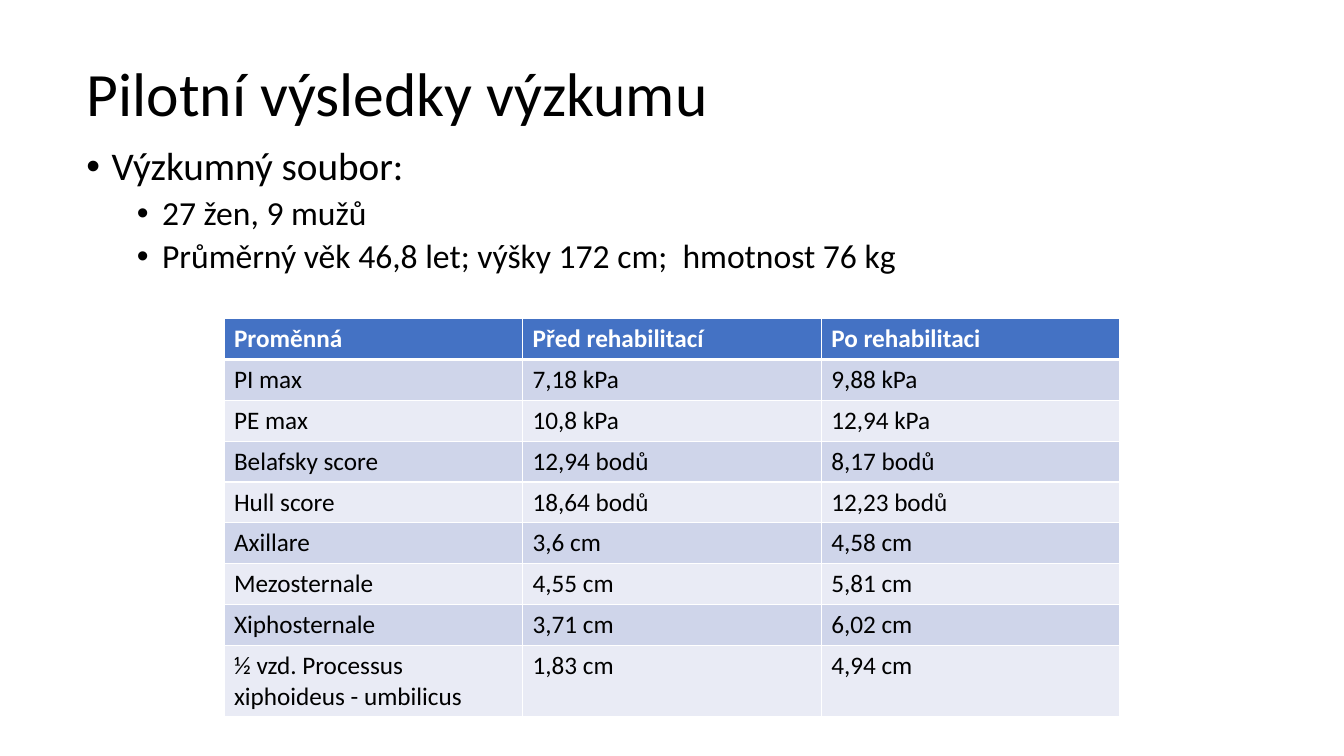
import dataclasses
import typing

import pptx
import pptx.dml.color
import pptx.enum.text
import pptx.oxml
import pptx.oxml.ns
import pptx.presentation
import pptx.slide
import pptx.table
import pptx.text.text
import pptx.util

Pt = pptx.util.Pt
FONT = "Calibri"
BLACK, WHITE, BLUE = "000000", "FFFFFF", "4472C4"
BANDS = ("CFD5EA", "E9EBF5")
ROWS = (
    ("Proměnná", "Před rehabilitací", "Po rehabilitaci"),
    ("PI max", "7,18 kPa", "9,88 kPa"),
    ("PE max", "10,8 kPa", "12,94 kPa"),
    ("Belafsky score", "12,94 bodů", "8,17 bodů"),
    ("Hull score", "18,64 bodů", "12,23 bodů"),
    ("Axillare", "3,6 cm", "4,58 cm"),
    ("Mezosternale", "4,55 cm", "5,81 cm"),
    ("Xiphosternale", "3,71 cm", "6,02 cm"),
    ("½ vzd. Processus xiphoideus - umbilicus", "1,83 cm", "4,94 cm"),
)


@dataclasses.dataclass
class Point:
    text: str
    level: int
    size: float
    left: float
    before: float


POINTS = (
    Point("Výzkumný soubor:", 0, 28, 18, 10),
    Point("27 žen, 9 mužů", 1, 24, 54, 5),
    Point("Průměrný věk 46,8 let; výšky 172 cm;  hmotnost 76 kg", 1, 24, 54, 5),
)


def apply(item: typing.Any, form: dict[str, typing.Any]) -> None:
    for name, value in form.items():
        setattr(item, name, value)


def place(left: float, top: float, width: float, height: float) -> dict[str, int]:
    return {"left": Pt(left), "top": Pt(top), "width": Pt(width), "height": Pt(height)}


def tint(color: str) -> pptx.dml.color.RGBColor:
    return pptx.dml.color.RGBColor.from_string(color)


def write(para: pptx.text.text._Paragraph, text: str, size: float,
          color: str = BLACK, bold: bool = False) -> None:
    run = para.add_run()
    run.text = text
    apply(run.font, {"name": FONT, "size": Pt(size), "bold": bold})
    run.font.color.rgb = tint(color)


def mark(para: pptx.text.text._Paragraph, point: Point) -> None:
    props = para._p.get_or_add_pPr()
    props.set("marL", str(Pt(point.left)))
    props.set("indent", str(Pt(-18)))
    space = pptx.oxml.ns.nsdecls("a")
    for tag in ('buFont {} typeface="Arial"', 'buChar {} char="•"'):
        props.append(pptx.oxml.parse_xml(f"<a:{tag.format(space)}/>"))


def edge(cell: pptx.table._Cell, widths: dict[str, float]) -> None:
    props = cell._tc.get_or_add_tcPr()
    space = pptx.oxml.ns.nsdecls("a")
    for spot, (side, width) in enumerate(widths.items()):
        props.insert(spot, pptx.oxml.parse_xml(
            f'<a:ln{side} {space} w="{Pt(width)}"><a:solidFill>'
            f'<a:srgbClr val="{WHITE}"/></a:solidFill></a:ln{side}>'))


def head(slide: pptx.slide.Slide) -> None:
    title = slide.shapes.title
    apply(title, place(54.7, 16.6, 828, 104.4))
    apply(title.text_frame, {
        "word_wrap": True,
        "auto_size": pptx.enum.text.MSO_AUTO_SIZE.NONE,
        "vertical_anchor": pptx.enum.text.MSO_ANCHOR.MIDDLE,
    })
    para = title.text_frame.paragraphs[0]
    apply(para, {"alignment": pptx.enum.text.PP_ALIGN.LEFT, "line_spacing": 0.9})
    write(para, "Pilotní výsledky výzkumu", 44)


def notes(slide: pptx.slide.Slide) -> None:
    box = slide.shapes.add_textbox(**place(54.7, 101.5, 828, 126))
    frame = box.text_frame
    frame.word_wrap = True
    for rank, point in enumerate(POINTS):
        para = frame.add_paragraph() if rank else frame.paragraphs[0]
        apply(para, {"level": point.level, "line_spacing": 0.9,
                     "space_before": Pt(point.before)})
        mark(para, point)
        write(para, point.text, point.size)


def grid(slide: pptx.slide.Slide) -> None:
    shape = slide.shapes.add_table(
        len(ROWS), len(ROWS[0]), **place(160, 227.5, 640, 262.8))
    table = shape.table
    for rank, row in enumerate(ROWS):
        top = rank == 0
        fill = BLUE if top else BANDS[(rank - 1) % 2]
        for col, text in enumerate(row):
            cell = table.cell(rank, col)
            cell.fill.solid()
            cell.fill.fore_color.rgb = tint(fill)
            edge(cell, {"L": 1, "R": 1, "T": 3 if rank == 1 else 1,
                        "B": 3 if top else 1})
            write(cell.text_frame.paragraphs[0], text, 18,
                  WHITE if top else BLACK, top)


def main() -> None:
    deck = pptx.Presentation()
    apply(deck, {"slide_width": Pt(960), "slide_height": Pt(540)})
    slide = deck.slides.add_slide(deck.slide_layouts.get_by_name("Title Only"))
    # Heading
    head(slide)
    # Study group
    notes(slide)
    # Results before and after
    grid(slide)
    deck.save("out.pptx")


if __name__ == "__main__":
    main()
